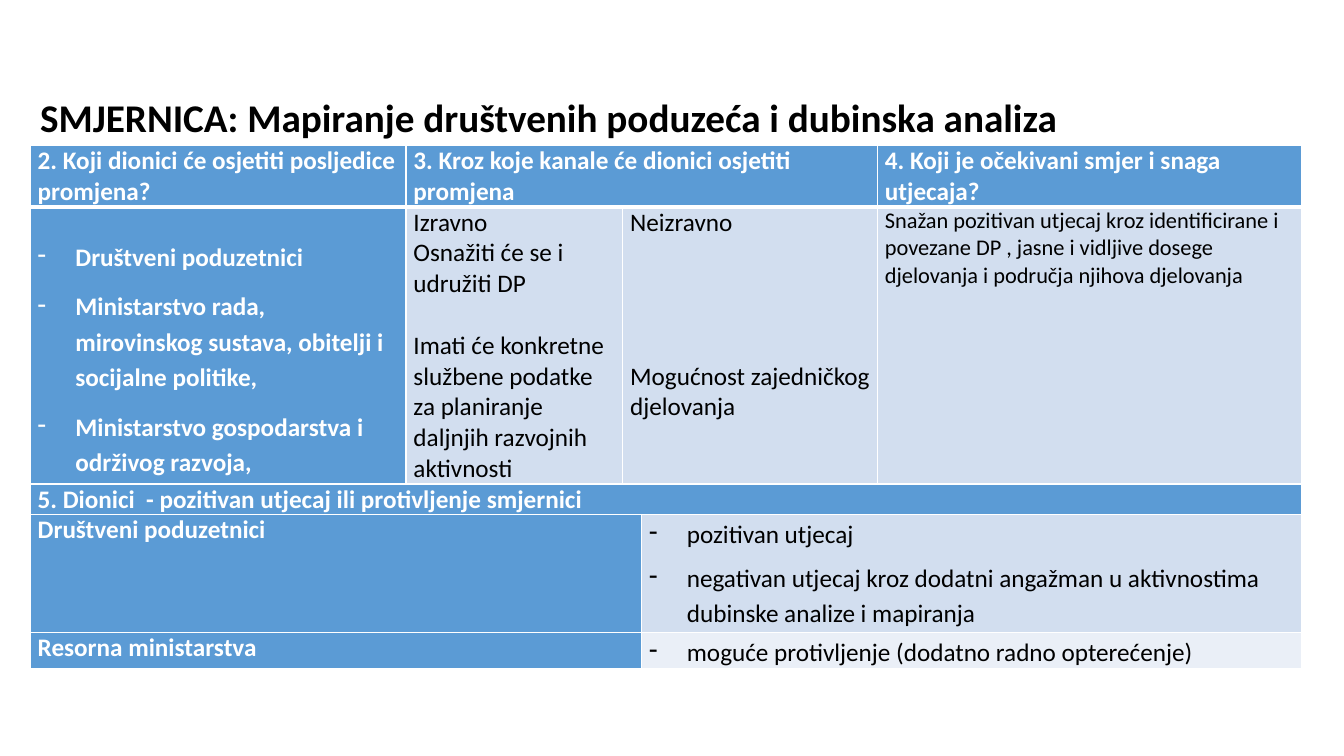
from lxml import etree
from pptx import Presentation
from pptx.dml.color import RGBColor
from pptx.enum import text
from pptx.oxml.ns import qn
from pptx.util import Cm, Pt

WHITE = RGBColor(0xFF, 0xFF, 0xFF)
BLACK = RGBColor(0, 0, 0)
BLUE = RGBColor(0x5B, 0x9B, 0xD5)
PALE = RGBColor(0xD2, 0xDE, 0xEF)
PALEST = RGBColor(0xEA, 0xEF, 0xF7)

FONT = "Calibri"
LINE = 22  # height in points of one 18 pt line
COLUMNS = (9.47, 5.46, 0.36, 5.94, 10.69)
ROWS = (1.55, 6.45, 0.76, 2.97, 0.84)


def set_font(paragraph, size, color, bold):
    font = paragraph.font
    font.name, font.size, font.bold = FONT, Pt(size), bold
    font.color.rgb = color


def add_title(slide, wording):
    title = slide.shapes.title
    title.left, title.top, title.width, title.height = Cm(0.76), Cm(2.06), Cm(31.95), Cm(1.62)
    frame = title.text_frame
    frame.text = wording
    frame.auto_size = text.MSO_AUTO_SIZE.NONE
    frame.vertical_anchor = text.MSO_ANCHOR.BOTTOM
    heading = frame.paragraphs[0]
    heading.alignment = text.PP_ALIGN.LEFT
    heading.line_spacing = 0.9
    set_font(heading, 28, BLACK, True)


def add_borders(cell, row):
    """White grid lines, thicker below the header row."""
    widths = {"L": 1, "R": 1, "T": 3 if row == 1 else 1, "B": 3 if row == 0 else 1}
    properties = cell._tc.get_or_add_tcPr()
    for side, width in widths.items():
        line = etree.SubElement(properties, qn(f"a:ln{side}"), w=str(Pt(width)))
        fill = etree.SubElement(line, qn("a:solidFill"))
        etree.SubElement(fill, qn("a:srgbClr"), val=str(WHITE))


def add_grid(slide):
    grid = slide.shapes.add_table(len(ROWS), len(COLUMNS), Cm(0.76), Cm(3.67),
                                  Cm(sum(COLUMNS)), Cm(sum(ROWS))).table
    for column, width in zip(grid.columns, COLUMNS):
        column.width = Cm(width)
    for index, (row, height) in enumerate(zip(grid.rows, ROWS)):
        row.height = Cm(height)
        for cell in row.cells:
            add_borders(cell, index)
    return grid


def add_dash(paragraph, space_after):
    properties = paragraph._p.get_or_add_pPr()
    properties.set("marL", str(Cm(0.95)))
    properties.set("indent", str(-Cm(0.95)))
    etree.SubElement(properties, qn("a:buChar"), char="-")
    paragraph.line_spacing = 1.15
    paragraph.space_after = Pt(space_after)


def fill_cell(grid, row, column, lines, fill, span=1, size=18, dash_gap=None, top=0, gaps=()):
    """Write lines; dash_gap makes a dashed list, gaps maps a line to its space before."""
    cell = grid.cell(row, column)
    if span > 1:
        cell.merge(grid.cell(row, column + span - 1))
    cell.fill.solid()
    cell.fill.fore_color.rgb = fill
    cell.margin_left = cell.margin_right = Cm(0.19)
    cell.margin_top, cell.margin_bottom = Pt(top), 0
    cell.text_frame.text = "\n".join(lines)
    on_blue = fill == BLUE
    for index, paragraph in enumerate(cell.text_frame.paragraphs):
        if dash_gap is not None:
            add_dash(paragraph, dash_gap)
        if index in gaps:
            paragraph.space_before = Pt(gaps[index])
        set_font(paragraph, size, WHITE if on_blue else BLACK, on_blue)


def fill_stakeholders(grid):
    fill_cell(grid, 0, 0, ["2. Koji dionici će osjetiti posljedice promjena?"], BLUE)
    fill_cell(grid, 0, 1, ["3. Kroz koje kanale će dionici osjetiti promjena"], BLUE, span=3)
    fill_cell(grid, 0, 4, ["4. Koji je očekivani smjer i snaga utjecaja?"], BLUE)
    fill_cell(grid, 1, 0, ["Društveni poduzetnici",
                           "Ministarstvo rada, mirovinskog sustava, obitelji i socijalne politike,",
                           "Ministarstvo gospodarstva i održivog razvoja,"],
              BLUE, dash_gap=10, top=LINE)
    fill_cell(grid, 1, 1, ["Izravno", "Osnažiti će se i udružiti DP",
                           "Imati će konkretne službene podatke za planiranje "
                           "daljnjih razvojnih aktivnosti"],
              PALE, gaps={2: LINE})
    fill_cell(grid, 1, 2, ["Neizravno", "Mogućnost zajedničkog djelovanja"],
              PALE, span=2, gaps={1: 4 * LINE})
    fill_cell(grid, 1, 4, ["Snažan pozitivan utjecaj kroz identificirane i povezane DP , "
                           "jasne i vidljive dosege djelovanja i područja njihova djelovanja"],
              PALE, size=16)


def fill_attitudes(grid):
    fill_cell(grid, 2, 0, ["5. Dionici  - pozitivan utjecaj ili protivljenje smjernici"],
              BLUE, span=5)
    fill_cell(grid, 3, 0, ["Društveni poduzetnici"], BLUE, span=3)
    fill_cell(grid, 3, 3, ["pozitivan utjecaj",
                           "negativan utjecaj kroz dodatni angažman u aktivnostima "
                           "dubinske analize i mapiranja"],
              PALE, span=2, dash_gap=6)
    fill_cell(grid, 4, 0, ["Resorna ministarstva"], BLUE, span=3)
    fill_cell(grid, 4, 3, ["moguće protivljenje (dodatno radno opterećenje)"],
              PALEST, span=2, dash_gap=6)


def main():
    deck = Presentation()
    deck.slide_width, deck.slide_height = Cm(33.87), Cm(19.05)
    slide = deck.slides.add_slide(deck.slide_layouts[5])
    add_title(slide, "SMJERNICA: Mapiranje društvenih poduzeća i dubinska analiza")
    grid = add_grid(slide)
    fill_stakeholders(grid)
    fill_attitudes(grid)
    deck.save("out.pptx")


if __name__ == "__main__":
    main()
